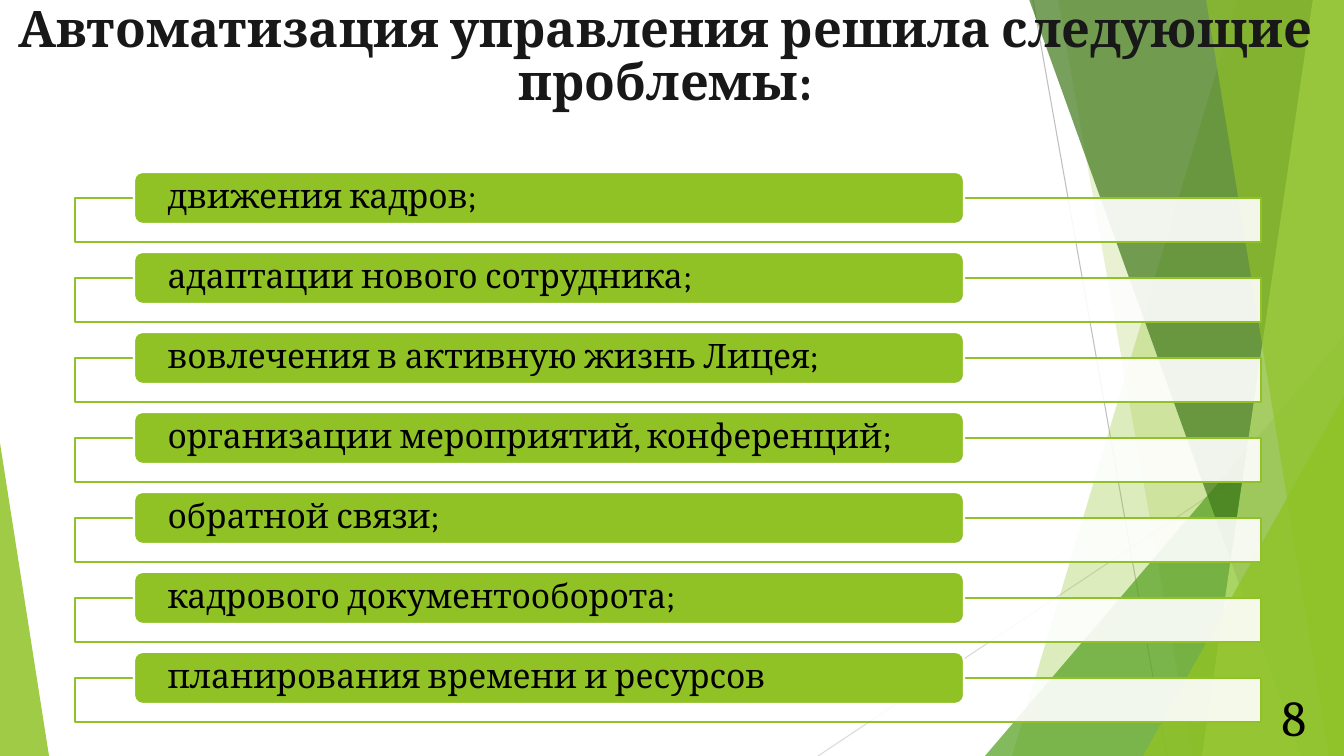
from dataclasses import dataclass

from lxml.etree import SubElement
from pptx import Presentation
from pptx.dml.color import RGBColor
from pptx.enum.shapes import MSO_CONNECTOR as Connector, MSO_SHAPE as Preset
from pptx.enum.text import MSO_ANCHOR as Anchor, MSO_AUTO_SIZE as AutoSize, PP_ALIGN as Align
from pptx.oxml.ns import qn
from pptx.util import Emu, Pt

EMU_PER_PX = 914400 / 100.8
FONT = "Cambria"
GREEN, WHITE, BLACK = "90C226", "FFFFFF", "000000"
SLIDE_WIDTH, SLIDE_HEIGHT = 1344, 756
ROW_PITCH = 80


@dataclass
class Box:
    left: int
    top: int
    width: int
    height: int

    def emu(self) -> list[Emu]:
        return [px(n) for n in (self.left, self.top, self.width, self.height)]

    def lowered(self, distance: int) -> "Box":
        return Box(self.left, self.top + distance, self.width, self.height)


@dataclass
class Ray:
    start: tuple[int, int]
    end: tuple[int, int]
    color: str


@dataclass
class Facet:
    """Panel reaching the right edge, with a slanted left side."""
    top_left: int
    bottom_left: int
    color: str
    opacity: int


@dataclass
class Wedge:
    """Right triangle standing on the bottom edge."""
    box: Box
    apex: float
    color: str
    opacity: int


TITLE = "Автоматизация управления решила следующие проблемы:"
SOLVED_PROBLEMS = [
    "движения кадров;",
    "адаптации нового сотрудника;",
    "вовлечения в активную жизнь Лицея;",
    "организации мероприятий, конференций;",
    "обратной связи;",
    "кадрового документооборота;",
    "планирования времени и ресурсов",
]
TITLE_BOX = Box(0, 0, 1331, 126)
FRAME_BOX = Box(75, 198, 1186, 44)
LABEL_BOX = Box(134, 172, 830, 52)
NUMBER_BOX = Box(1241, 696, 75, 40)

RAYS = [
    Ray((1033, 0), (1167, 756), "BFBFBF"),
    Ray((1344, 406), (818, 756), "D9D9D9"),
]
BACKDROP = [
    Facet(1238, 1012, GREEN, 30),
    Facet(1058, 1192, GREEN, 20),
    Wedge(Box(985, 336, 359, 420), 1, "54A021", 72),
    Facet(1029, 1301, "3F7819", 70),
    Facet(1313, 1202, "C0E474", 70),
    Facet(1206, 1329, GREEN, 65),
    Wedge(Box(1143, 396, 201, 360), 1, GREEN, 80),
    Wedge(Box(0, 443, 49, 313), 0, GREEN, 85),
]


def px(length: float) -> Emu:
    return Emu(round(length * EMU_PER_PX))


def rgb(color: str) -> RGBColor:
    return RGBColor.from_string(color)


def paint(shape, fill: str, opacity: int = 100, line: str | None = None) -> None:
    shape.shadow.inherit = False
    shape.fill.solid()
    shape.fill.fore_color.rgb = rgb(fill)
    if opacity < 100:
        color = shape.fill._xPr.find(qn("a:solidFill"))[0]
        SubElement(color, qn("a:alpha"), val=str(opacity * 1000))
    if line:
        shape.line.color.rgb = rgb(line)
        shape.line.width = Pt(1.5)
    else:
        shape.line.fill.background()


def write(shape, text: str, size: int, color: str, align: Align, bold: bool = False,
          spacing: float = 1.0, anchor: Anchor = Anchor.MIDDLE) -> None:
    frame = shape.text_frame
    frame.text = text
    frame.word_wrap = True
    frame.auto_size = AutoSize.NONE
    frame.vertical_anchor = anchor
    paragraph = frame.paragraphs[0]
    paragraph.alignment = align
    paragraph.line_spacing = spacing
    font = paragraph.runs[0].font
    font.name, font.size, font.bold = FONT, Pt(size), bold
    font.color.rgb = rgb(color)


def draw_ray(slide, ray: Ray) -> None:
    ends = [px(n) for n in (*ray.start, *ray.end)]
    connector = slide.shapes.add_connector(Connector.STRAIGHT, *ends)
    connector.line.color.rgb = rgb(ray.color)
    connector.line.width = Pt(0.75)
    SubElement(connector.element.spPr, qn("a:effectLst"))


def draw_backdrop_part(slide, part: Facet | Wedge) -> None:
    if isinstance(part, Facet):
        builder = slide.shapes.build_freeform(part.top_left, -1, scale=EMU_PER_PX)
        builder.add_line_segments([(SLIDE_WIDTH, -1), (SLIDE_WIDTH, SLIDE_HEIGHT),
                                   (part.bottom_left, SLIDE_HEIGHT)])
        shape = builder.convert_to_shape()
    else:
        shape = slide.shapes.add_shape(Preset.ISOSCELES_TRIANGLE, *part.box.emu())
        shape.adjustments[0] = part.apex
    paint(shape, part.color, part.opacity)


def draw_problem(slide, row: int, text: str) -> None:
    offset = row * ROW_PITCH
    frame = slide.shapes.add_shape(Preset.RECTANGLE, *FRAME_BOX.lowered(offset).emu())
    paint(frame, WHITE, 90, GREEN)
    label = slide.shapes.add_shape(Preset.ROUNDED_RECTANGLE, *LABEL_BOX.lowered(offset).emu())
    paint(label, GREEN, line=WHITE)
    write(label, text, 24, BLACK, Align.LEFT, spacing=0.9)
    margins = label.text_frame
    margins.margin_left = margins.margin_right = px(31)
    margins.margin_top = margins.margin_bottom = 0


def main() -> None:
    presentation = Presentation()
    presentation.slide_width, presentation.slide_height = px(SLIDE_WIDTH), px(SLIDE_HEIGHT)
    slide = presentation.slides.add_slide(presentation.slide_layouts[5])

    # Backdrop
    for ray in RAYS:
        draw_ray(slide, ray)
    for part in BACKDROP:
        draw_backdrop_part(slide, part)

    # Title, raised above the backdrop
    title = slide.shapes.title
    title.element.getparent().append(title.element)
    title.left, title.top, title.width, title.height = TITLE_BOX.emu()
    write(title, TITLE, 36, "181818", Align.CENTER, bold=True, spacing=0.88, anchor=Anchor.TOP)

    # List of solved problems
    for row, text in enumerate(SOLVED_PROBLEMS):
        draw_problem(slide, row, text)

    # Slide number
    number = slide.shapes.add_textbox(*NUMBER_BOX.emu())
    write(number, "8", 36, BLACK, Align.RIGHT)

    presentation.save("out.pptx")


if __name__ == "__main__":
    main()
